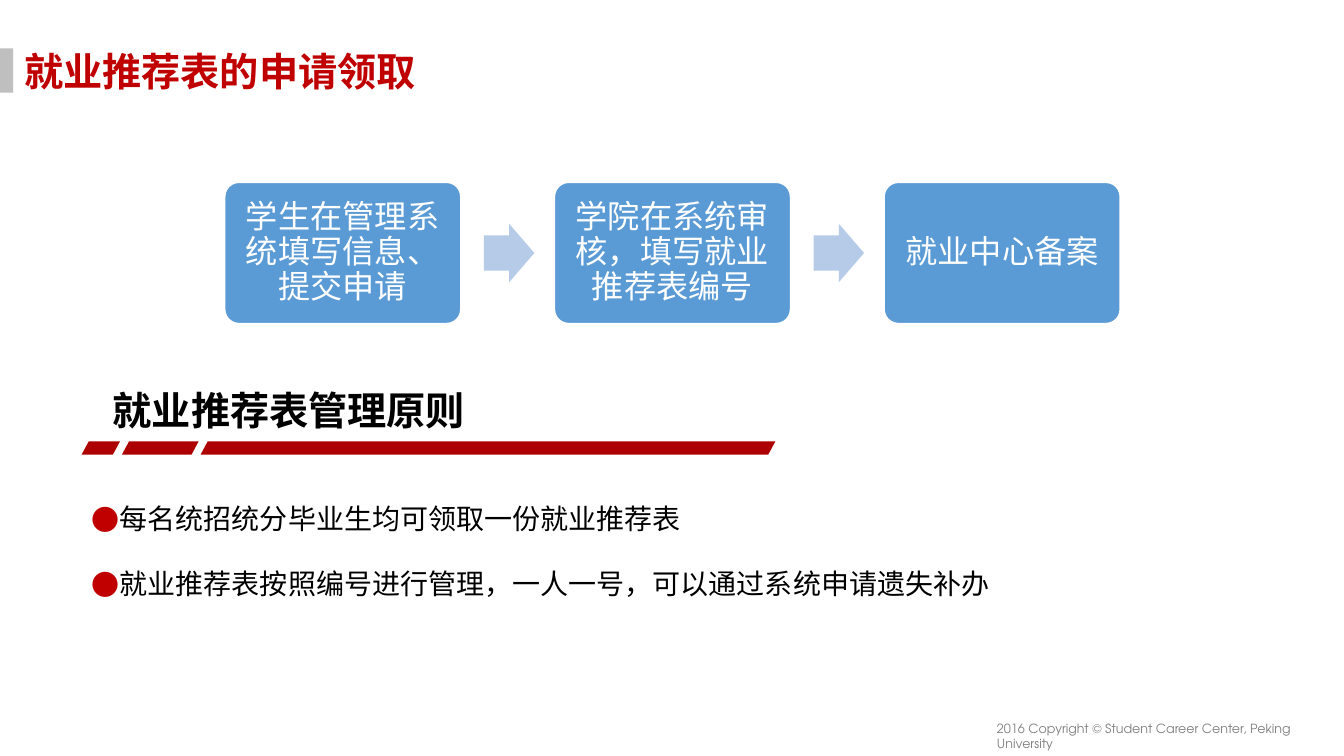
"""Build the slide on applying for the job recommendation form."""
from lxml.etree import SubElement
from pptx import Presentation
from pptx.dml.color import RGBColor
from pptx.enum.shapes import MSO_SHAPE
from pptx.enum.text import MSO_ANCHOR, MSO_AUTO_SIZE, PP_ALIGN
from pptx.oxml.ns import qn
from pptx.util import Inches, Pt

theme = {
    "red": "C00000", "bar": "AD0101", "gray": "BFBFBF", "note": "808080",
    "blue": "5B9BD5", "pale": "B5CBE7", "black": "000000", "white": "FFFFFF",
    "head": 28, "step": 23, "list": 20, "foot": 9,
    "han": "Noto Sans CJK SC", "latin": "Calibri", "foot font": "TeX Gyre Adventor",
}


def paint(shape, color):
    """Fill a shape with one theme colour, without line or shadow."""
    shape.shadow.inherit = False
    shape.fill.solid()
    shape.fill.fore_color.rgb = RGBColor.from_string(theme[color])
    shape.line.fill.background()


def write(shape, lines, size, color, face="han", bold=False, frame={}, para={}):
    """Set the lines of a shape and format its frame, paragraphs and runs."""
    text = shape.text_frame
    text.text = "\n".join(lines)
    for key, value in {"word_wrap": True, "auto_size": MSO_AUTO_SIZE.NONE,
                       "vertical_anchor": MSO_ANCHOR.TOP, **frame}.items():
        setattr(text, key, value)
    for part in text.paragraphs:
        for key, value in {"alignment": PP_ALIGN.LEFT, **para}.items():
            setattr(part, key, value)
        font = part.runs[0].font
        for key, value in {"name": theme[face], "size": Pt(theme[size]), "bold": bold}.items():
            setattr(font, key, value)
        font.color.rgb = RGBColor.from_string(theme[color])
        SubElement(font._element, qn("a:ea"), typeface=theme["han"])


deck = Presentation()
deck.slide_width, deck.slide_height = Inches(13.33), Inches(7.5)
slide = deck.slides.add_slide(deck.slide_layouts[1])
shapes = slide.shapes
title, body = slide.placeholders

foot = shapes.add_textbox(Inches(9.79), Inches(7.1), Inches(3.53), Inches(0.25))
write(foot, ["2016 Copyright © Student Career Center, Peking University"],
      "foot", "note", "foot font")

tab = shapes.add_shape(MSO_SHAPE.RECTANGLE, 0, Inches(0.48), Inches(0.13), Inches(0.44))
paint(tab, "gray")

places = {"left": 0.14, "top": 0.42, "width": 8.41, "height": 0.57}
for key, value in places.items():
    setattr(title, key, Inches(value))
write(title, ["就业推荐表的申请领取"], "head", "red", bold=True)

steps = ["学生在管理系统填写信息、提交申请", "学院在系统审核，填写就业推荐表编号", "就业中心备案"]
left, top, wide, high, pitch = 2.23, 1.81, 2.34, 1.4, 3.27
inset = dict.fromkeys(["margin_left", "margin_right", "margin_top", "margin_bottom"], Inches(0.1))
for col, step in enumerate(steps):
    x = left + col * pitch
    if col:
        arrow = shapes.add_shape(MSO_SHAPE.RIGHT_ARROW, Inches(x - 0.7),
                                 Inches(top + (high - 0.58) / 2), Inches(0.5), Inches(0.58))
        arrow.adjustments[0], arrow.adjustments[1] = 0.6, 0.5
        paint(arrow, "pale")
    card = shapes.add_shape(MSO_SHAPE.ROUNDED_RECTANGLE, Inches(x), Inches(top),
                            Inches(wide), Inches(high))
    card.adjustments[0] = 0.1
    paint(card, "blue")
    card.line.color.rgb = RGBColor.from_string(theme["white"])
    card.line.width = Pt(1)
    write(card, [step], "step", "white", "latin",
          frame={"vertical_anchor": MSO_ANCHOR.MIDDLE, **inset},
          para={"alignment": PP_ALIGN.CENTER, "line_spacing": 0.9})

places = {"left": 0.81, "top": 4.76, "width": 11.5, "height": 1.77}
for key, value in places.items():
    setattr(body, key, Inches(value))
write(body, ["每名统招统分毕业生均可领取一份就业推荐表",
             "就业推荐表按照编号进行管理，一人一号，可以通过系统申请遗失补办"],
      "list", "black", para={"line_spacing": 1.5, "space_before": Pt(10)})
for item in body.text_frame.paragraphs:
    props = item._p.get_or_add_pPr()
    props.set("marL", str(Inches(0.25)))
    props.set("indent", str(-Inches(0.25)))
    SubElement(SubElement(props, qn("a:buClr")), qn("a:srgbClr"), val=theme["red"])
    SubElement(props, qn("a:buFont"), typeface=theme["han"])
    SubElement(props, qn("a:buChar"), char="●")

upper, lower, slant = 438, 451, 7
spans = [(81, 112), (121, 190), (199, 762)]
rule = shapes.build_freeform(spans[0][0], lower, scale=Inches(0.01))
for start, end in spans:
    rule.move_to(start, lower)
    rule.add_line_segments([(start + slant, upper), (end + slant, upper), (end, lower)])
paint(rule.convert_to_shape(), "bar")

label = shapes.add_textbox(Inches(1.02), Inches(3.78), Inches(3.74), Inches(0.57))
write(label, ["就业推荐表管理原则"], "head", "black", bold=True, frame={"word_wrap": False})

deck.save("out.pptx")
